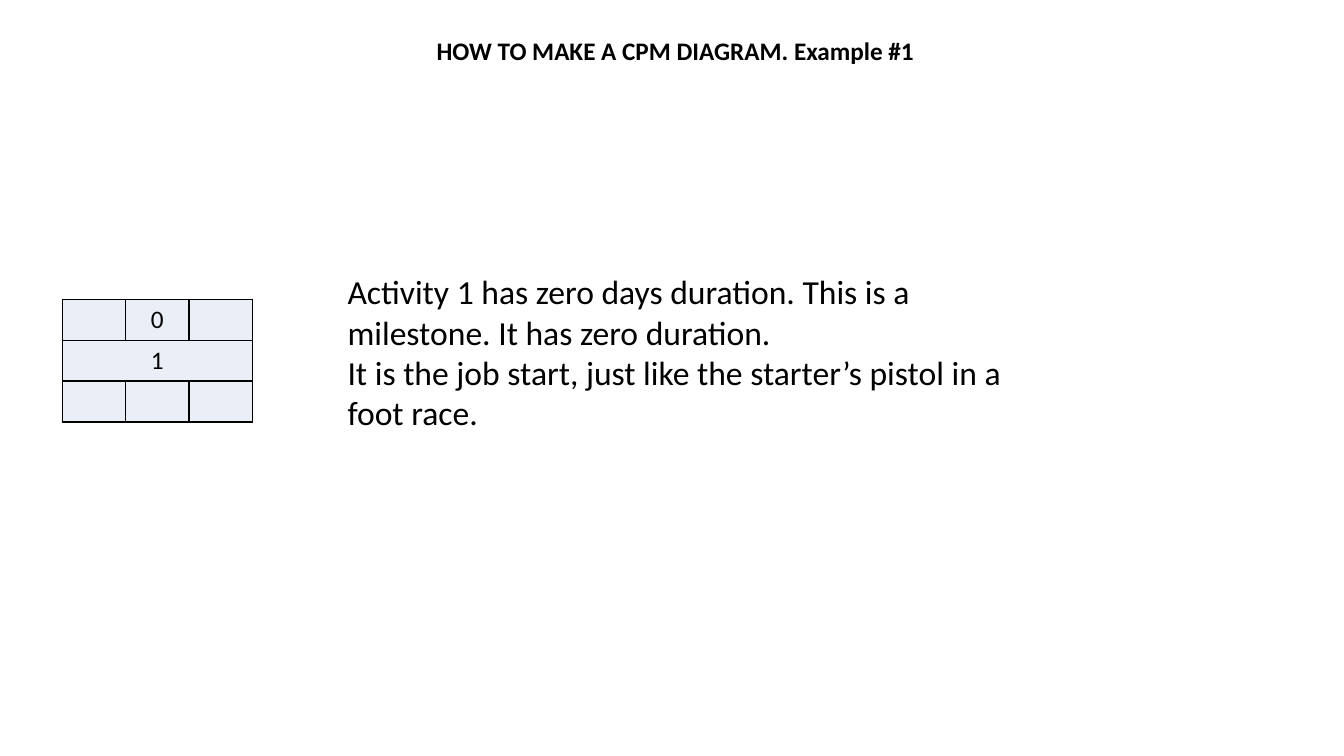
"""Build the CPM diagram slide explaining the zero-duration start milestone."""
from lxml.etree import SubElement
from pptx import Presentation
from pptx.dml.color import RGBColor
from pptx.enum.text import MSO_ANCHOR, MSO_AUTO_SIZE, PP_ALIGN
from pptx.oxml.ns import qn
from pptx.util import Pt

THEME = {
    "font": "Calibri",
    "ink": RGBColor.from_string("000000"),
    "cell": RGBColor.from_string("EAEFF7"),
    "title": Pt(18),
    "node": Pt(18),
    "body": Pt(24),
}


def write(p, text, size, bold=False):
    r = p.add_run()
    r.text = text
    style = {"name": THEME["font"], "size": THEME[size], "bold": bold}
    for name, value in style.items():
        setattr(r.font, name, value)
    r.font.color.rgb = THEME["ink"]


def add_borders(cell):
    tcPr = cell._tc.get_or_add_tcPr()
    for side in ("lnL", "lnR", "lnT", "lnB"):
        ln = SubElement(tcPr, qn(f"a:{side}"), w=str(Pt(1)))
        fill = SubElement(ln, qn("a:solidFill"))
        SubElement(fill, qn("a:srgbClr"), val=str(THEME["ink"]))


prs = Presentation()
prs.slide_width, prs.slide_height = Pt(960), Pt(540)
s = prs.slides.add_slide(prs.slide_layouts[5])

title = s.shapes.title
title.left, title.top, title.width, title.height = Pt(122.4), Pt(26.6), Pt(720), Pt(24.5)
tf = title.text_frame
frame = {"auto_size": MSO_AUTO_SIZE.NONE, "vertical_anchor": MSO_ANCHOR.BOTTOM, "word_wrap": True}
for name, value in frame.items():
    setattr(tf, name, value)
p = tf.paragraphs[0]
p.alignment, p.line_spacing = PP_ALIGN.CENTER, 0.9
write(p, "HOW TO MAKE A CPM DIAGRAM. Example #1", "title", bold=True)

node = s.shapes.add_table(3, 3, Pt(44.6), Pt(213.8), Pt(135.6), Pt(87.6)).table
node.first_row = node.horz_banding = False
for col in node.columns:
    col.width = Pt(45.2)
for row in node.rows:
    row.height = Pt(29.2)
for cell in node.iter_cells():
    add_borders(cell)
    cell.fill.solid()
    cell.fill.fore_color.rgb = THEME["cell"]
node.cell(1, 0).merge(node.cell(1, 2))
for row, col, text in ((0, 1, "0"), (1, 0, "1")):
    p = node.cell(row, col).text_frame.paragraphs[0]
    p.alignment = PP_ALIGN.CENTER
    write(p, text, "node")

sp = s.shapes.add_textbox(Pt(241.2), Pt(190.1), Pt(484.6), Pt(145.4))
tf = sp.text_frame
tf.word_wrap = True
notes = (
    "Activity 1 has zero days duration. This is a milestone. It has zero duration.",
    "It is the job start, just like the starter’s pistol in a foot race.",
)
for i, text in enumerate(notes):
    p = tf.add_paragraph() if i else tf.paragraphs[0]
    write(p, text, "body")

prs.save("out.pptx")
